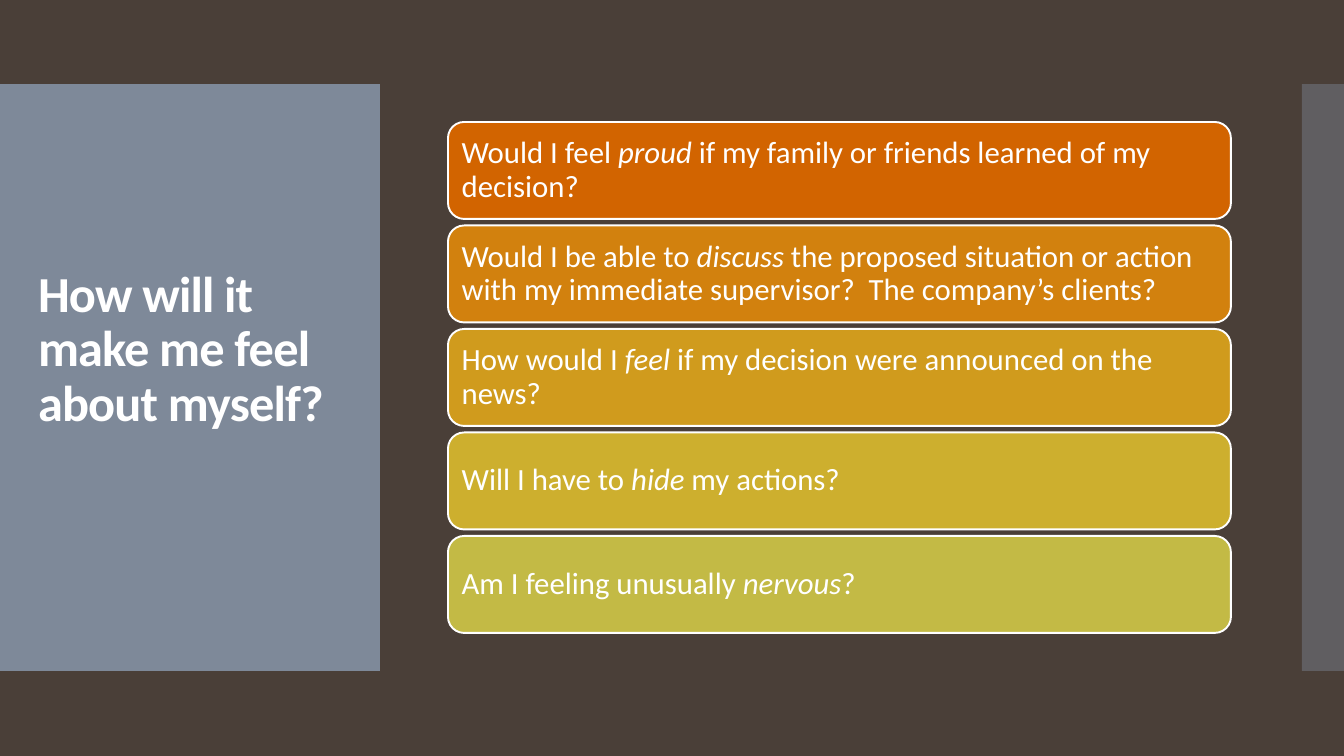
from lxml import etree
from pptx import Presentation
from pptx.dml.color import RGBColor
from pptx.enum.shapes import MSO_SHAPE
from pptx.enum.text import MSO_ANCHOR, PP_ALIGN
from pptx.oxml.ns import qn
from pptx.util import Pt

RECT, ROUNDED = MSO_SHAPE.RECTANGLE, MSO_SHAPE.ROUNDED_RECTANGLE
MIDDLE, LEFT = MSO_ANCHOR.MIDDLE, PP_ALIGN.LEFT

# Content
TITLE = "How will it make me feel about myself?"
QUESTIONS = [  # fill, text before, stressed word, text after
    ("D26400", "Would I feel ", "proud", " if my family or friends learned of my decision?"),
    ("D2810E", "Would I be able to ", "discuss",
     " the proposed situation or action with my immediate supervisor?  The company’s clients?"),
    ("D09B1D", "How would I ", "feel", " if my decision were announced on the news?"),
    ("CDAF2E", "Will I have to ", "hide", " my actions?"),
    ("C3BA45", "Am I feeling unusually ", "nervous", "?"),
]
PANELS = [(0, 380, 95), (1302, 42, 40)]  # left, width, opacity in percent

# Look and layout, in px
BACKGROUND, PANEL, WHITE = "4A3F38", "818E9F", "FFFFFF"
FONT = "Calibri"
SLIDE_W, SLIDE_H = 1344, 756
PANEL_TOP, PANEL_H = 84, 587
TITLE_BOX = (28, 124, 325, 507)
TITLE_INSETS = (10, 5, 10, 59)
CARD_LEFT, CARD_W, CARD_H = 448, 783, 97
STACK_TOP, STACK_BOTTOM = 122, 633
CARD_INSETS = (9, 9, 9, 9)


def px(length):
    return round(length * 914400 / 100.8)


def color(hex_string):
    return RGBColor.from_string(hex_string)


def add_box(slide, preset, box, fill):
    shape = slide.shapes.add_shape(preset, *map(px, box))
    shape.shadow.inherit = False
    shape.fill.solid()
    shape.fill.fore_color.rgb = color(fill)
    return shape


def prepare_text(shape, insets):
    frame = shape.text_frame
    frame.word_wrap = True
    frame.vertical_anchor = MIDDLE
    (frame.margin_left, frame.margin_top,
     frame.margin_right, frame.margin_bottom) = map(px, insets)
    paragraph = frame.paragraphs[0]
    paragraph.alignment = LEFT
    paragraph.line_spacing = 0.9
    return paragraph


def add_run(paragraph, text, size, bold=False, italic=False):
    run = paragraph.add_run()
    run.text = text
    font = run.font
    font.name, font.size, font.bold, font.italic = FONT, Pt(size), bold, italic
    font.color.rgb = color(WHITE)
    return run


def main():
    deck = Presentation()
    deck.slide_width, deck.slide_height = px(SLIDE_W), px(SLIDE_H)
    slide = deck.slides.add_slide(deck.slide_layouts[6])
    slide.background.fill.solid()
    slide.background.fill.fore_color.rgb = color(BACKGROUND)

    # Translucent side panels
    for left, width, opacity in PANELS:
        panel = add_box(slide, RECT, (left, PANEL_TOP, width, PANEL_H), PANEL)
        panel.line.fill.background()
        tint = panel.fill._xPr.find(qn("a:solidFill"))[0]
        etree.SubElement(tint, qn("a:alpha")).set("val", str(opacity * 1000))

    # Title
    title = slide.shapes.add_textbox(*map(px, TITLE_BOX))
    heading = add_run(prepare_text(title, TITLE_INSETS), TITLE, 36, bold=True)
    heading.font._element.set("spc", "-60")

    # Question cards, evenly spread over the stack
    pitch = (STACK_BOTTOM - STACK_TOP - CARD_H) / (len(QUESTIONS) - 1)
    for row, (fill, before, stressed, after) in enumerate(QUESTIONS):
        top = STACK_TOP + row * pitch
        card = add_box(slide, ROUNDED, (CARD_LEFT, top, CARD_W, CARD_H), fill)
        card.line.color.rgb = color(WHITE)
        card.line.width = Pt(1.35)
        question = prepare_text(card, CARD_INSETS)
        add_run(question, before, 22)
        add_run(question, stressed, 22, italic=True)
        add_run(question, after, 22)

    deck.save("out.pptx")


if __name__ == "__main__":
    main()
